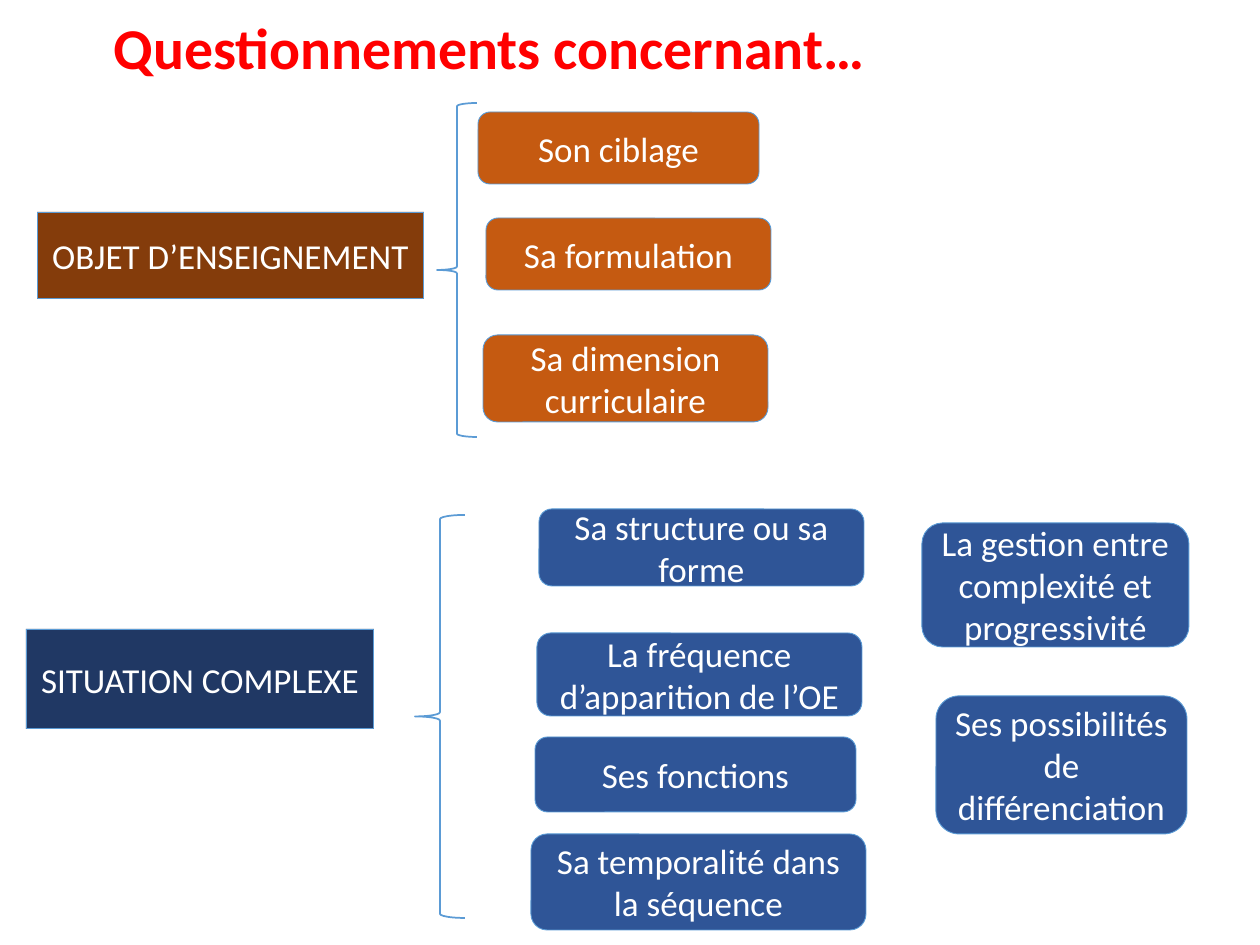
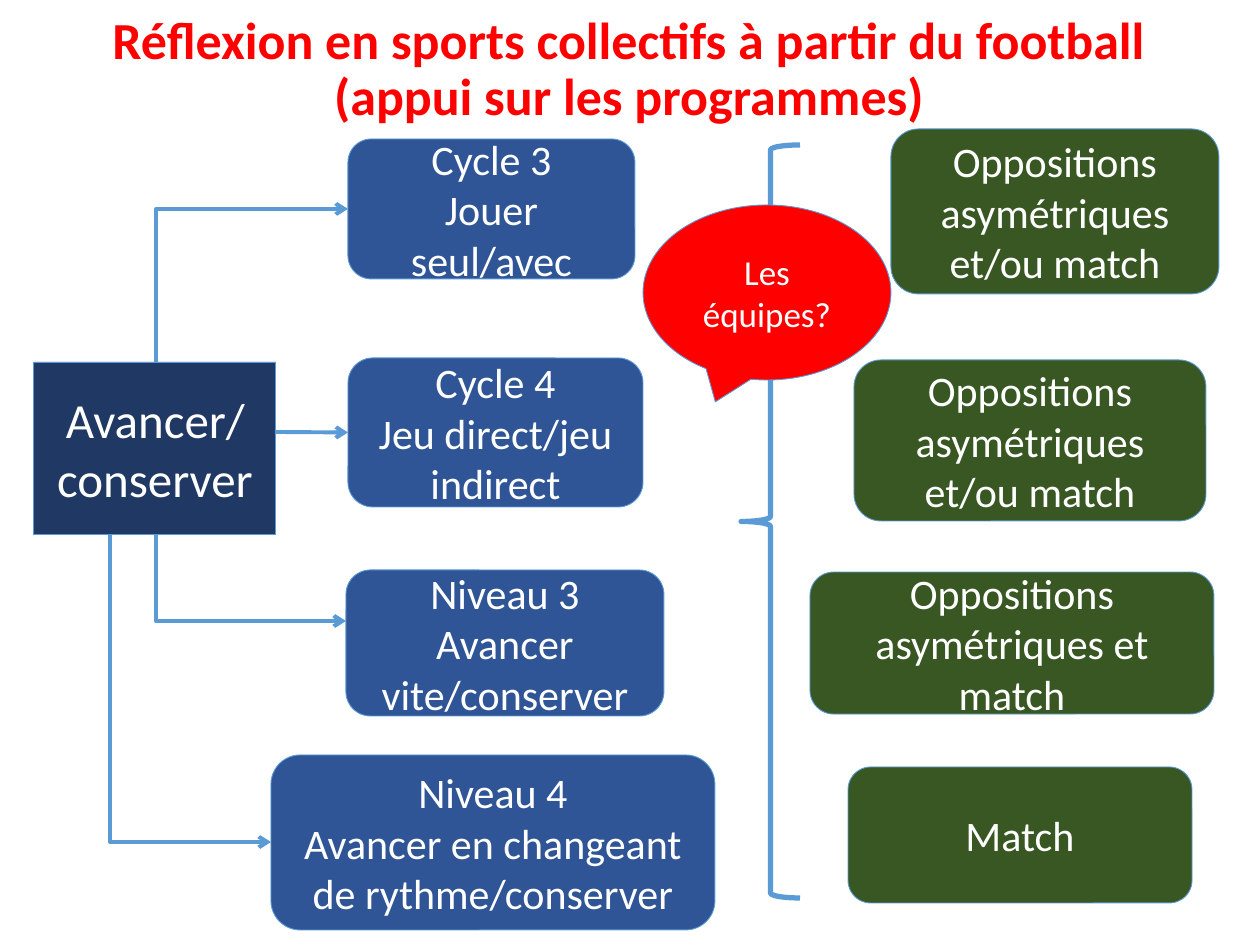
from lxml import etree
from pptx import Presentation
from pptx.dml.color import RGBColor
from pptx.enum.shapes import MSO_CONNECTOR, MSO_SHAPE
from pptx.enum.text import MSO_ANCHOR, MSO_AUTO_SIZE, PP_ALIGN
from pptx.oxml.ns import qn
from pptx.util import Pt

RECTANGLE = MSO_SHAPE.RECTANGLE
ROUNDED = MSO_SHAPE.ROUNDED_RECTANGLE
BRACE = MSO_SHAPE.LEFT_BRACE
CALLOUT = MSO_SHAPE.OVAL_CALLOUT
STRAIGHT, ELBOW = MSO_CONNECTOR.STRAIGHT, MSO_CONNECTOR.ELBOW
LEFT, CENTER = PP_ALIGN.LEFT, PP_ALIGN.CENTER
MIDDLE = MSO_ANCHOR.MIDDLE
NO_AUTOFIT = MSO_AUTO_SIZE.NONE

FONT = "Calibri"
RED, WHITE, OUTLINE = "FF0000", "FFFFFF", "5B9BD5"
BROWN, ORANGE = "843C0B", "C55A11"
NAVY, BLUE, GREEN = "203864", "2F5597", "385723"
TITLE_ONLY = 5
LEFT_SIDE = 1


def px(length):
    """Turn a length in px into EMU."""
    return round(length * 914400 / 126)


def color(value):
    """Turn a hex string into a colour."""
    return RGBColor.from_string(value)


def within(origin, place):
    """Move a place given relative to an origin onto the page."""
    return (origin[0] + place[0], origin[1] + place[1], *place[2:])


def write(frame, text, size=20, ink=WHITE, bold=False, align=CENTER, spacing=None):
    """Fill a text frame, with one paragraph for each line of text."""
    frame.word_wrap = True
    frame.auto_size = NO_AUTOFIT
    frame.vertical_anchor = MIDDLE
    for number, line in enumerate(text.split("\n")):
        para = frame.add_paragraph() if number else frame.paragraphs[0]
        para.text = line
        para.alignment = align
        para.line_spacing = spacing
        for span in para.runs:
            span.font.name = FONT
            span.font.size = Pt(size)
            span.font.bold = bold
            span.font.color.rgb = color(ink)


def add_page(deck, title, place, **style):
    """Add a page with its red title."""
    page = deck.slides.add_slide(deck.slide_layouts[TITLE_ONLY])
    box = page.shapes.title
    box.left, box.top, box.width, box.height = map(px, place)
    write(box.text_frame, title, ink=RED, bold=True, spacing=0.9, **style)
    return page


def add_box(page, kind, place, fill=None, text="", size=20, weight=0.5):
    """Add an outlined shape, filled and labelled if asked."""
    box = page.shapes.add_shape(kind, *map(px, place))
    box.shadow.inherit = False
    box.line.color.rgb = color(OUTLINE)
    box.line.width = Pt(weight)
    if fill:
        box.fill.solid()
        box.fill.fore_color.rgb = color(fill)
    else:
        box.fill.background()
    if text:
        write(box.text_frame, text, size)
    return box


def add_arrow(page, kind, start, end):
    """Add a connector with an open arrowhead at its end."""
    arrow = page.shapes.add_connector(kind, *map(px, (*start, *end)))
    arrow.line.color.rgb = color(OUTLINE)
    arrow.line.width = Pt(2.25)
    head = etree.SubElement(arrow.line._get_or_add_ln(), qn("a:tailEnd"))
    head.set("type", "arrow")
    etree.SubElement(arrow.element.spPr, qn("a:effectLst"))
    return arrow


def add_elbow(page, start, end):
    """Add an arrow that runs upright first, then to the right."""
    rise = end[1] - start[1]
    middle_x, middle_y = (start[0] + end[0]) / 2, (start[1] + end[1]) / 2
    half_width = abs(rise) / 2
    half_height = (end[0] - start[0]) / 2 * (1 if rise < 0 else -1)
    arrow = add_arrow(page, ELBOW,
                      (middle_x + half_width, middle_y + half_height),
                      (middle_x - half_width, middle_y - half_height))
    properties = arrow.element.spPr
    turn = 90 if rise < 0 else 270
    properties.find(qn("a:xfrm")).set("rot", str(turn * 60000))
    properties.find(qn("a:prstGeom")).set("prst", "bentConnector2")


def add_topic(page, origin, topic, brace, cards, dark, light):
    """Add a topic, its brace and the cards of its questions."""
    text, place = topic
    add_box(page, RECTANGLE, within(origin, place), dark, text)
    for text, place in cards:
        add_box(page, ROUNDED, within(origin, place), light, text)
    add_box(page, BRACE, within(origin, brace), weight=1)


def add_progression(page, origin):
    """Add the aim and the arrows that lead to its four stages."""
    stages = [
        ("Cycle 3\nJouer seul/avec", (314, 0, 287, 140)),
        ("Cycle 4\nJeu direct/jeu indirect", (314, 219, 295, 149)),
        ("Niveau 3\nAvancer vite/conserver", (312, 431, 318, 146)),
        ("Niveau 4\nAvancer en changeant de rythme/conserver", (237, 616, 444, 175)),
    ]
    elbows = [((122, 223), (314, 70)), ((122, 396), (312, 482)), ((76, 396), (237, 703))]
    add_box(page, RECTANGLE, within(origin, (0, 223, 242, 173)), NAVY,
            "Avancer/conserver", 28)
    boxes = [add_box(page, ROUNDED, within(origin, place), BLUE, text, 24)
             for text, place in stages]
    for start, end in elbows:
        add_elbow(page, within(origin, start), within(origin, end))
    direct = add_arrow(page, STRAIGHT, within(origin, (241, 293)), within(origin, (314, 293)))
    direct.end_connect(boxes[1], LEFT_SIDE)


def add_games(page, origin):
    """Add the game forms, their brace and the question on teams."""
    free_choice = "Oppositions asymétriques et/ou match"
    games = [
        (free_choice, (248, 0, 328, 165)),
        (free_choice, (211, 231, 352, 161)),
        ("Oppositions asymétriques et match", (167, 443, 404, 142)),
        ("Match", (205, 638, 344, 136)),
    ]
    for text, place in games:
        add_box(page, ROUNDED, within(origin, place), GREEN, text, 24)
    add_box(page, BRACE, within(origin, (98, 16, 59, 753)), weight=3)
    add_box(page, CALLOUT, within(origin, (0, 76, 248, 175)), RED, "Les équipes?")


def add_questions_page(deck):
    """Add the page of questions on both topics."""
    page = add_page(deck, "Questionnements concernant…", (101, 0, 1074, 102),
                    size=33, align=LEFT)
    add_topic(
        page, (37, 103),
        topic=("OBJET D’ENSEIGNEMENT", (0, 109, 387, 87)),
        brace=(400, 0, 40, 334),
        cards=[
            ("Son ciblage", (441, 9, 281, 72)),
            ("Sa formulation", (449, 115, 285, 72)),
            ("Sa dimension curriculaire", (446, 232, 285, 87)),
        ],
        dark=BROWN, light=ORANGE)
    add_topic(
        page, (26, 509),
        topic=("SITUATION COMPLEXE", (0, 120, 348, 100)),
        brace=(389, 6, 50, 403),
        cards=[
            ("Sa structure ou sa forme", (513, 0, 325, 77)),
            ("La fréquence d’apparition de l’OE", (511, 124, 325, 83)),
            ("Ses fonctions", (509, 228, 321, 75)),
            ("Sa temporalité dans la séquence", (505, 325, 335, 96)),
            ("La gestion entre complexité et progressivité", (896, 14, 267, 124)),
            ("Ses possibilités de différenciation", (910, 187, 251, 138)),
        ],
        dark=NAVY, light=BLUE)


def add_football_page(deck):
    """Add the page on team sports, from stages to game forms."""
    page = add_page(
        deck,
        "Réflexion en sports collectifs à partir du football\v(appui sur les programmes)",
        (26, 18, 1207, 105), size=29.7, align=CENTER)
    add_progression(page, (34, 139))
    add_games(page, (643, 129))


def main():
    """Build and save the deck."""
    deck = Presentation()
    deck.slide_width, deck.slide_height = px(1260), px(945)
    add_questions_page(deck)
    add_football_page(deck)
    deck.save("out.pptx")


if __name__ == "__main__":
    main()
